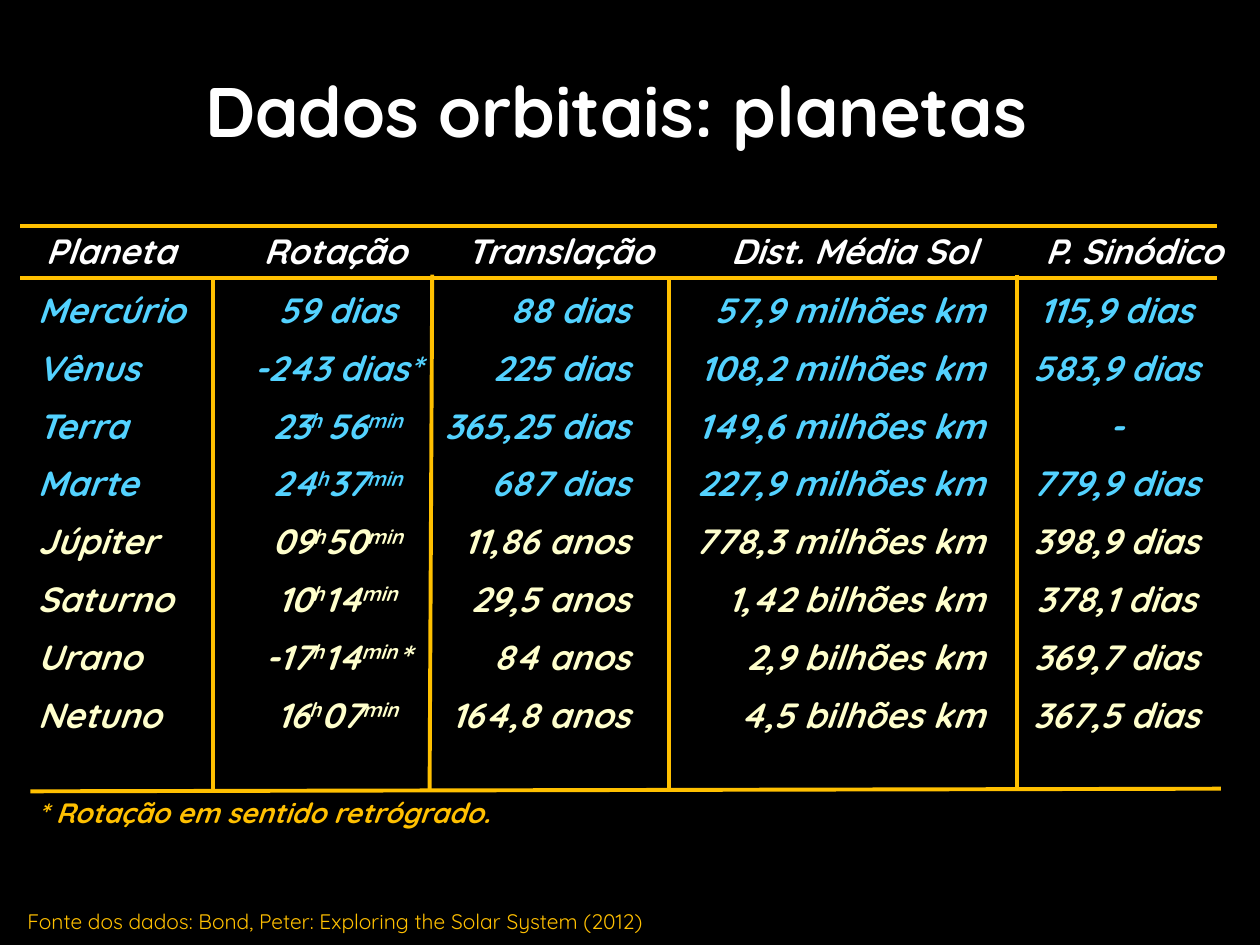
from lxml import etree
from pptx import Presentation
from pptx.dml.color import RGBColor
from pptx.enum.shapes import MSO_CONNECTOR
from pptx.enum.text import MSO_ANCHOR, PP_ALIGN
from pptx.oxml.ns import qn
from pptx.util import Pt

STRAIGHT = MSO_CONNECTOR.STRAIGHT
MIDDLE = MSO_ANCHOR.MIDDLE
CENTER = PP_ALIGN.CENTER

FONT = "Quicksand"
COLORS = {"background": "000000", "title": "FFFFFF", "inner": "53D2FF",
          "outer": "FFFFCC", "gold": "FFC000"}
INSET = 7.2
HEADINGS = ["Planeta", "Rotação", "Translação", "Dist. Média Sol", "P. Sinódico"]
HEADING_TABS = [("ctr", 191.5), ("ctr", 320), ("ctr", 488), ("ctr", 648)]
PLANET_TABS = [("ctr", 193), ("r", 360), ("r", 563), ("ctr", 638)]
PLANETS = {
    "inner": [
        ["Mercúrio", "59 dias", "88 dias", "57,9 milhões km", "115,9 dias"],
        ["Vênus", "-243 dias*", "225 dias", "108,2 milhões km", "583,9 dias"],
        ["Terra", "23^h ^56^min^", "365,25 dias", "149,6 milhões km", "-"],
        ["Marte", "24^h^37^min^", "687 dias", "227,9 milhões km", "779,9 dias"],
    ],
    "outer": [
        ["Júpiter", "09^h^50^min^", "11,86 anos", "778,3 milhões km", "398,9 dias"],
        ["Saturno", "10^h^14^min^", "29,5 anos", "1,42 bilhões km", "378,1 dias"],
        ["Urano", "-17^h^14^min^*", "84 anos", "2,9 bilhões km", "369,7 dias"],
        ["Netuno", "16^h^07^min^", "164,8 anos", "4,5 bilhões km", "367,5 dias"],
    ],
}
RULES = [
    (121.7, 158.4, 121.7, 452.2),
    (17.3, 452.2, 697.7, 450.7),
    (247, 157, 245.5, 451.4),
    (382.3, 158.4, 382.3, 450.7),
    (581, 157, 581, 451.4),
    (11.5, 128.9, 695.5, 128.9),
    (11.5, 159.1, 695.5, 159.1),
]


def style(para, size, color, bold=True, italic=True):
    """Set the font of a whole paragraph."""
    font = para.font
    font.name, font.size, font.bold, font.italic = FONT, Pt(size), bold, italic
    font.color.rgb = RGBColor.from_string(COLORS[color])


def add_text_frame(page, box):
    """Add a wrapping text box and return its text frame."""
    frame = page.shapes.add_textbox(*map(Pt, box)).text_frame
    frame.word_wrap = True
    return frame


def fill_row(para, cells, tabs, left, color):
    """Write cells at tab stops; text between carets is superscript."""
    tab_list = etree.SubElement(para._p.get_or_add_pPr(), qn("a:tabLst"))
    for align, position in tabs:
        etree.SubElement(tab_list, qn("a:tab"), algn=align,
                         pos=str(Pt(position - left - INSET)))
    style(para, 20, color)
    for index, piece in enumerate("\t".join(cells).split("^")):
        span = para.add_run()
        span.text = piece
        if index % 2:
            span._r.get_or_add_rPr().set("baseline", "30000")


def place_title(page, box):
    """Move and format the title placeholder."""
    title = page.shapes.title
    title.left, title.top, title.width, title.height = map(Pt, box)
    frame = title.text_frame
    frame.word_wrap = True
    frame.vertical_anchor = MIDDLE
    para = frame.paragraphs[0]
    para.text = "Dados orbitais: planetas"
    para.alignment = CENTER
    style(para, 40, "title", italic=False)


def place_headings(page, box):
    """Write the column headings."""
    para = add_text_frame(page, box).paragraphs[0]
    fill_row(para, HEADINGS, HEADING_TABS, box[0], "title")


def place_planets(page, box):
    """Write one line for each planet, then the footnote."""
    frame = add_text_frame(page, box)
    para = frame.paragraphs[0]
    for color, rows in PLANETS.items():
        for cells in rows:
            fill_row(para, cells, PLANET_TABS, box[0], color)
            para = frame.add_paragraph()
            para.space_before = Pt(9)
    para.text = "* Rotação em sentido retrógrado."
    para.space_before = Pt(34.5)
    style(para, 16, "gold")


def place_rules(page):
    """Draw the golden rules between rows and columns."""
    for ends in RULES:
        rule = page.shapes.add_connector(STRAIGHT, *map(Pt, ends))
        rule.line.width = Pt(2.25)
        rule.line.color.rgb = RGBColor.from_string(COLORS["gold"])
        etree.SubElement(rule._element.spPr, qn("a:effectLst"))


def place_source(page, box):
    """Write the data source line."""
    para = add_text_frame(page, box).paragraphs[0]
    para.text = "Fonte dos dados: Bond, Peter: Exploring the Solar System (2012)"
    style(para, 12, "gold", bold=False, italic=False)


def main():
    """Build and save the deck."""
    deck = Presentation()
    deck.slide_width, deck.slide_height = Pt(720), Pt(540)
    page = deck.slides.add_slide(deck.slide_layouts[5])
    fill = page.background.fill
    fill.solid()
    fill.fore_color.rgb = RGBColor.from_string(COLORS["background"])
    place_planets(page, (14.4, 161.3, 714.2, 378))
    place_headings(page, (19, 127.4, 690, 31.7))
    place_title(page, (28, 26, 648, 73.4))
    place_rules(page)
    place_source(page, (8.6, 515.5, 514.8, 21.6))
    deck.save("out.pptx")


if __name__ == "__main__":
    main()
